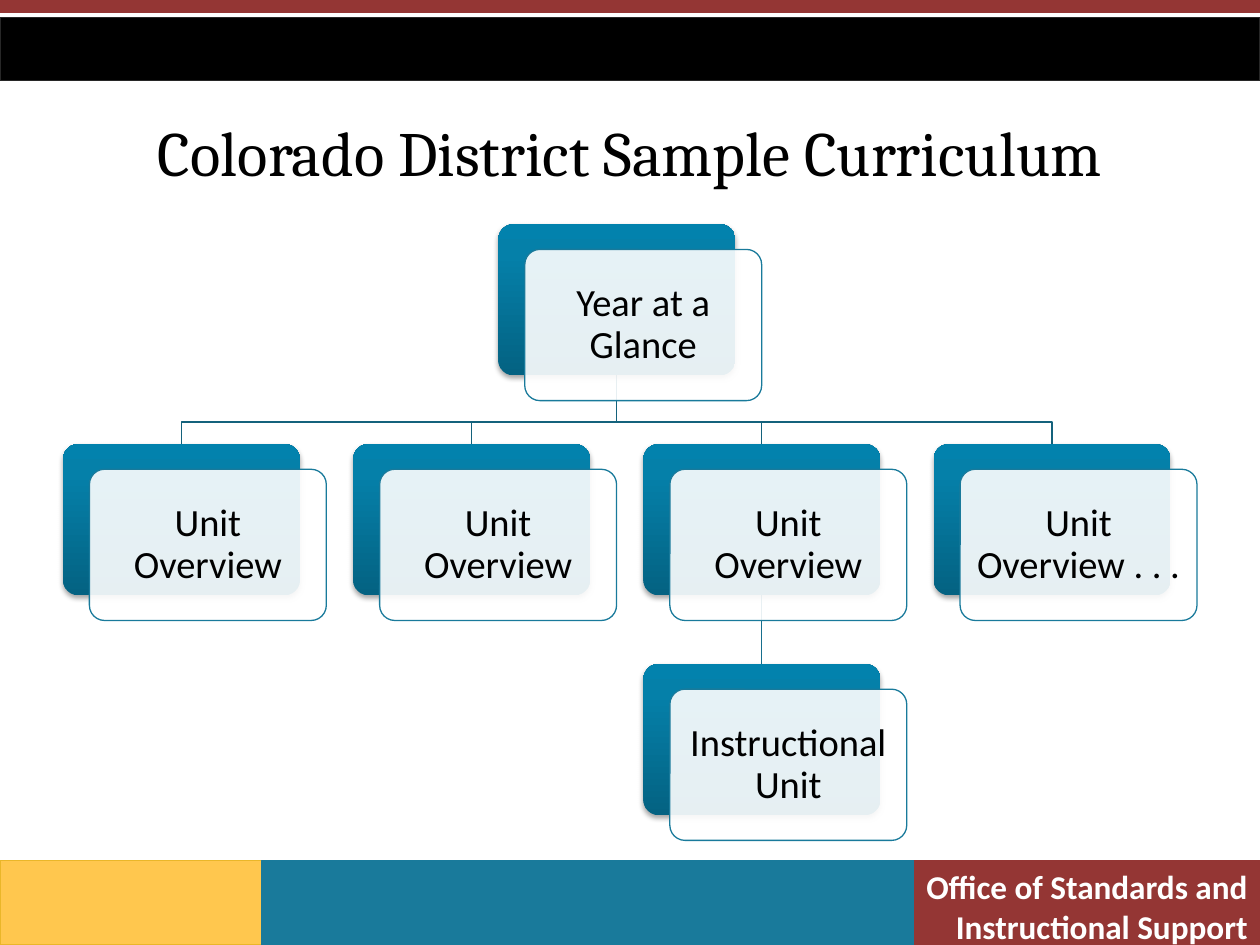
from dataclasses import dataclass
from typing import Optional

import pptx
import pptx.dml.color
import pptx.enum.shapes
import pptx.enum.text
import pptx.oxml
import pptx.oxml.ns
import pptx.util

Inches = pptx.util.Inches
Align = pptx.enum.text.PP_ALIGN
Anchor = pptx.enum.text.MSO_ANCHOR
Preset = pptx.enum.shapes.MSO_SHAPE


@dataclass(frozen=True)
class Theme:
    red: str = "943634"
    gold: str = "FFC74E"
    gold_line: str = "EAB629"
    teal: str = "197A9B"
    black: str = "000000"
    black_line: str = "272727"
    white: str = "FFFFFF"
    branch: str = "14627C"
    lower_branch: str = "176F8D"
    gradient: tuple = ((0, "046282"), (80, "0580A9"), (100, "0282AD"))
    heading_font: str = "Cambria"
    body_font: str = "Calibri"
    title_size: int = 36
    card_size: int = 22
    footer_size: int = 19
    line_width: float = 0.75


@dataclass(frozen=True)
class Band:
    left: float
    top: float
    width: float
    height: float
    fill: str
    line: str


@dataclass(frozen=True)
class Card:
    text: str
    column: float
    row: int
    parent: Optional["Card"] = None

    @property
    def left(self) -> float:
        return CHART_LEFT + self.column * COLUMN_STEP

    @property
    def top(self) -> float:
        return CHART_TOP + self.row * ROW_STEP

    @property
    def center(self) -> float:
        return self.left + CARD_WIDTH / 2


THEME = Theme()
CHART_LEFT, CHART_TOP = 0.5, 1.78
COLUMN_STEP = (7.41 - CHART_LEFT) / 3
ROW_STEP = (5.27 - CHART_TOP) / 2
CARD_WIDTH, CARD_HEIGHT = 1.88, 1.2
FRONT_OFFSET = (0.21, 0.2)
BEND_DROP = 0.37

BANDS = [
    Band(7.25, 6.83, 2.75, 0.67, THEME.red, THEME.red),
    Band(0, 6.83, 2.08, 0.67, THEME.gold, THEME.gold_line),
    Band(2.08, 6.83, 5.17, 0.67, THEME.teal, THEME.teal),
    Band(0, 0, 10, 0.1, THEME.red, THEME.red),
    Band(0, 0.14, 10, 0.5, THEME.black, THEME.black_line),
]

YEAR = Card("Year at a Glance", 1.5, 0)
UNITS = [
    Card("Unit Overview" + ending, column, 1, YEAR)
    for column, ending in enumerate(["", "", "", " . . ."])
]
CARDS = [YEAR, *UNITS, Card("Instructional Unit", 2, 2, UNITS[2])]


def color(value: str) -> pptx.dml.color.RGBColor:
    return pptx.dml.color.RGBColor.from_string(value)


def drawing_element(markup: str):
    namespace = pptx.oxml.ns.nsdecls("a")
    return pptx.oxml.parse_xml(markup.replace(">", f" {namespace}>", 1))


def set_line(shape, line_color: str) -> None:
    shape.line.color.rgb = color(line_color)
    shape.line.width = pptx.util.Pt(THEME.line_width)


def write_text(shape, text: str, *, size: float, font: str, font_color: str,
               align=Align.CENTER, anchor=Anchor.MIDDLE, bold: bool = False,
               line_spacing: float = 1.0, inset: Optional[float] = None) -> None:
    frame = shape.text_frame
    frame.word_wrap = True
    frame.vertical_anchor = anchor
    if inset is not None:
        frame.margin_left = frame.margin_right = Inches(inset)
        frame.margin_top = frame.margin_bottom = Inches(inset)
    frame.text = text
    for paragraph in frame.paragraphs:
        paragraph.alignment = align
        paragraph.line_spacing = line_spacing
        paragraph.space_before = pptx.util.Pt(0)
        for run in paragraph.runs:
            run.font.name = font
            run.font.size = pptx.util.Pt(size)
            run.font.bold = bold
            run.font.color.rgb = color(font_color)


def add_box(slide, preset, left: float, top: float, width: float, height: float):
    shape = slide.shapes.add_shape(
        preset, Inches(left), Inches(top), Inches(width), Inches(height))
    shape.shadow.inherit = False
    return shape


def add_band(slide, band: Band) -> None:
    shape = add_box(slide, Preset.RECTANGLE, band.left, band.top, band.width, band.height)
    shape.fill.solid()
    shape.fill.fore_color.rgb = color(band.fill)
    set_line(shape, band.line)


def add_branch(slide, card: Card) -> None:
    """Join a card to its parent, straight down or with a bend."""
    start, end = card.parent.center, card.center
    top, bottom = card.parent.top + CARD_HEIGHT, card.top
    if start == end:
        line = slide.shapes.add_connector(
            pptx.enum.shapes.MSO_CONNECTOR.STRAIGHT,
            Inches(start), Inches(top), Inches(end), Inches(bottom))
        line._element.spPr.append(drawing_element("<a:effectLst></a:effectLst>"))
        set_line(line, THEME.lower_branch)
        return
    bend = Inches(top + BEND_DROP)
    builder = slide.shapes.build_freeform(Inches(start), Inches(top))
    builder.add_line_segments(
        [(Inches(start), bend), (Inches(end), bend), (Inches(end), Inches(bottom))],
        close=False)
    line = builder.convert_to_shape()
    line.shadow.inherit = False
    line.fill.background()
    set_line(line, THEME.branch)


def style_card_back(shape) -> None:
    """Give the back plate its three-stop gradient and soft shadow."""
    shape.line.fill.background()
    shape.fill.gradient()
    shape.fill.gradient_angle = 90
    properties = shape._element.spPr
    stops = properties.find(".//" + pptx.oxml.ns.qn("a:gsLst"))
    for stop in list(stops):
        stops.remove(stop)
    for position, value in THEME.gradient:
        stops.append(drawing_element(
            f'<a:gs pos="{position * 1000}"><a:srgbClr val="{value}"/></a:gs>'))
    effects = properties.find(pptx.oxml.ns.qn("a:effectLst"))
    blur, distance = pptx.util.Pt(3.1), pptx.util.Pt(1.8)
    effects.append(drawing_element(
        f'<a:outerShdw blurRad="{blur}" dist="{distance}" dir="5400000" rotWithShape="0">'
        f'<a:srgbClr val="{THEME.black}"><a:alpha val="35000"/></a:srgbClr></a:outerShdw>'))


def add_card(slide, card: Card) -> None:
    back = add_box(slide, Preset.ROUNDED_RECTANGLE, card.left, card.top,
                   CARD_WIDTH, CARD_HEIGHT)
    style_card_back(back)
    front = add_box(slide, Preset.ROUNDED_RECTANGLE, card.left + FRONT_OFFSET[0],
                    card.top + FRONT_OFFSET[1], CARD_WIDTH, CARD_HEIGHT)
    front.fill.solid()
    front.fill.fore_color.rgb = color(THEME.white)
    fill_color = front._element.spPr.find(
        pptx.oxml.ns.qn("a:solidFill") + "/" + pptx.oxml.ns.qn("a:srgbClr"))
    fill_color.append(drawing_element('<a:alpha val="90000"></a:alpha>'))
    set_line(front, THEME.teal)
    for plate in (back, front):
        plate.adjustments[0] = 0.1
    write_text(front, card.text, size=THEME.card_size, font=THEME.body_font,
               font_color=THEME.black, line_spacing=0.9, inset=0.09)


def main() -> None:
    presentation = pptx.Presentation()
    presentation.slide_width, presentation.slide_height = Inches(10), Inches(7.5)
    slide = presentation.slides.add_slide(presentation.slide_layouts[5])

    for band in BANDS:
        add_band(slide, band)
    footer = slide.shapes.add_textbox(Inches(3.42), Inches(6.83), Inches(6.58), Inches(0.67))
    write_text(footer, "Office of Standards and\nInstructional Support",
               size=THEME.footer_size, font=THEME.body_font, font_color=THEME.white,
               align=Align.RIGHT, anchor=Anchor.TOP, bold=True)

    for card in CARDS:
        if card.parent:
            add_branch(slide, card)
    for card in CARDS:
        add_card(slide, card)

    title = slide.shapes.title
    title.left, title.top = Inches(0.5), Inches(0.58)
    title.width, title.height = Inches(9), Inches(1.25)
    write_text(title, "Colorado District Sample Curriculum", size=THEME.title_size,
               font=THEME.heading_font, font_color=THEME.black)
    presentation.save("out.pptx")


if __name__ == "__main__":
    main()
